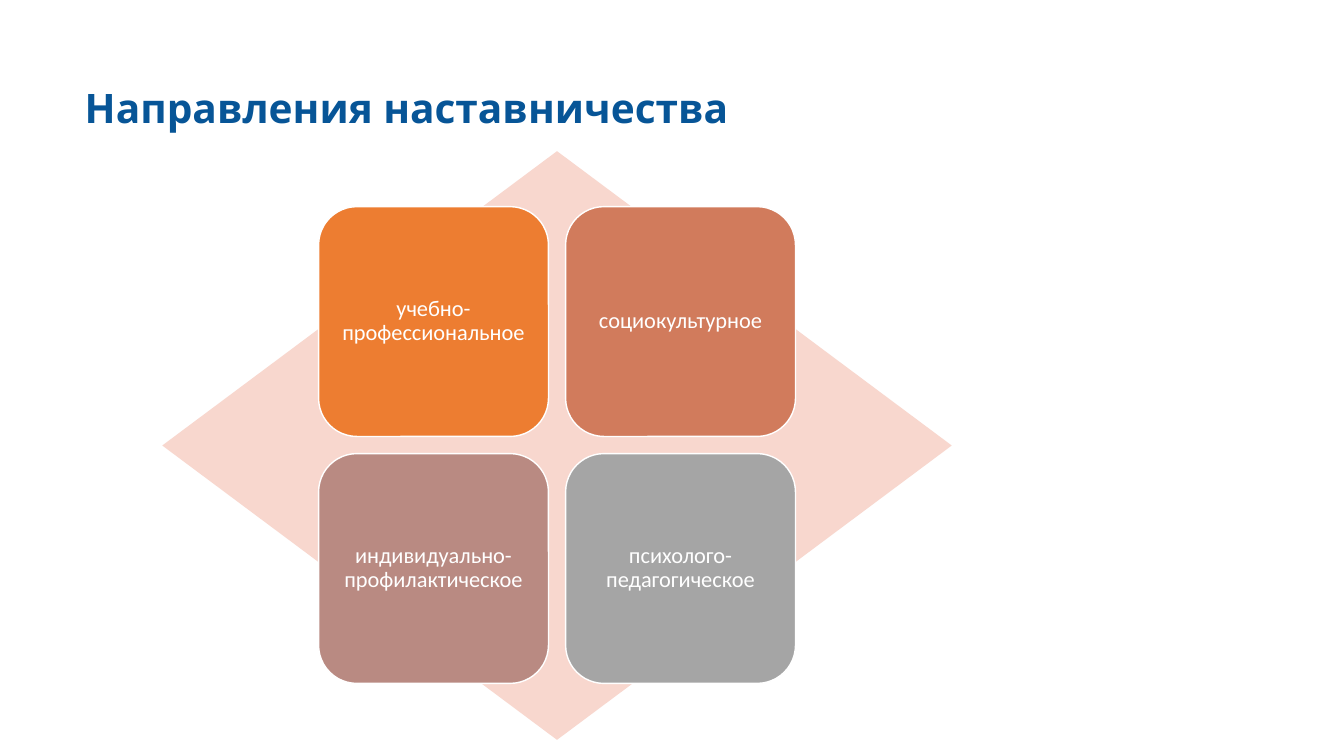
"""Build the slide on directions of mentoring."""
from dataclasses import dataclass

from pptx import Presentation
from pptx.dml.color import RGBColor
from pptx.enum.shapes import MSO_SHAPE
from pptx.enum.text import MSO_ANCHOR, MSO_AUTO_SIZE, PP_ALIGN
from pptx.util import Emu, Pt


@dataclass(frozen=True)
class Theme:
    """Hold colours, fonts and type sizes."""
    title: str = "075597"
    back: str = "F8D7CE"
    white: str = "FFFFFF"
    tiles: tuple = ("ED7D31", "D17B5C", "B98A82", "A5A5A5")
    head: str = "Karla"
    body: str = "Calibri"
    big: int = 29
    small: int = 16


THEME = Theme()
AREAS = (
    "учебно-профессиональное",
    "социокультурное",
    "индивидуально-профилактическое",
    "психолого-педагогическое",
)


def px(count):
    """Turn px, at 100 to the inch, into EMU."""
    return Emu(count * 9144)


def write(frame, text, align, face, size, color, bold=False):
    """Write one centred-anchor line of styled text in a frame."""
    frame.word_wrap = True
    frame.auto_size = MSO_AUTO_SIZE.NONE
    frame.vertical_anchor = MSO_ANCHOR.MIDDLE
    para = frame.paragraphs[0]
    para.alignment = align
    para.line_spacing = 0.9
    run = para.add_run()
    run.text = text
    run.font.name = face
    run.font.size = Pt(size)
    run.font.bold = bold
    run.font.color.rgb = RGBColor.from_string(color)


def add_title(slide, box, text):
    """Place and fill the title placeholder."""
    title = slide.shapes.title
    title.left, title.top, title.width, title.height = map(px, box)
    write(title.text_frame, text, PP_ALIGN.LEFT, THEME.head, THEME.big,
          THEME.title, True)


def add_form(group, kind, box, fill):
    """Add a flat filled shape to the group."""
    form = group.shapes.add_shape(kind, *map(px, box))
    form.shadow.inherit = False
    form.fill.solid()
    form.fill.fore_color.rgb = RGBColor.from_string(fill)
    form.line.fill.background()
    return form


def add_matrix(slide, box, areas):
    """Set four tiles in a centred grid over a diamond."""
    left, top, width, height = box
    side, gap = 228, 17
    span = 2 * side + gap
    group = slide.shapes.add_group_shape()
    add_form(group, MSO_SHAPE.DIAMOND, box, THEME.back)
    for index, (text, fill) in enumerate(zip(areas, THEME.tiles)):
        row, col = divmod(index, 2)
        x = left + (width - span) // 2 + col * (side + gap)
        y = top + (height - span) // 2 + row * (side + gap)
        tile = add_form(group, MSO_SHAPE.ROUNDED_RECTANGLE,
                        (x, y, side, side), fill)
        tile.line.color.rgb = RGBColor.from_string(THEME.white)
        tile.line.width = Pt(1)
        frame = tile.text_frame
        frame.margin_left = frame.margin_right = px(7)
        frame.margin_top = frame.margin_bottom = px(7)
        write(frame, text, PP_ALIGN.CENTER, THEME.body, THEME.small,
              THEME.white)


def main():
    """Build and save the deck."""
    deck = Presentation()
    deck.slide_width, deck.slide_height = px(1333), px(750)
    slide = deck.slides.add_slide(deck.slide_layouts[5])
    add_title(slide, (74, 67, 940, 84), "Направления наставничества")
    add_matrix(slide, (161, 150, 783, 584), AREAS)
    deck.save("out.pptx")


if __name__ == "__main__":
    main()
